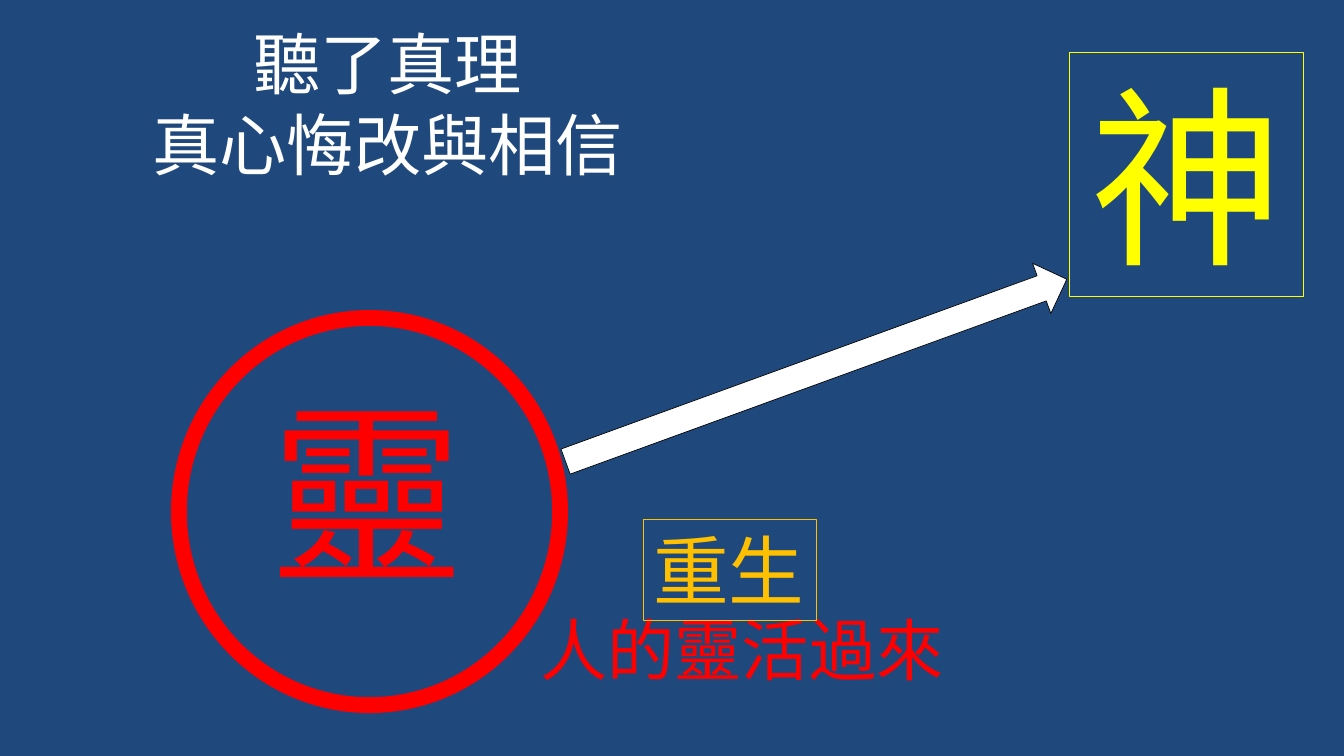
"""Build a slide on the spirit of man being born again toward God."""
from dataclasses import dataclass
from typing import Any, Optional

import lxml.etree
import pptx
import pptx.dml.color
import pptx.enum.shapes
import pptx.enum.text
import pptx.oxml.ns
import pptx.util

RGBColor = pptx.dml.color.RGBColor
Inches = pptx.util.Inches
Pt = pptx.util.Pt
KIND = pptx.enum.shapes.MSO_SHAPE
ALIGN = pptx.enum.text.PP_ALIGN
ANCHOR = pptx.enum.text.MSO_ANCHOR
SIZING = pptx.enum.text.MSO_AUTO_SIZE

NAVY = RGBColor(0x1F, 0x49, 0x7D)
RED = RGBColor(0xFF, 0x00, 0x00)
YELLOW = RGBColor(0xFF, 0xFF, 0x00)
GOLD = RGBColor(0xFF, 0xC0, 0x00)
WHITE = RGBColor(0xFF, 0xFF, 0xFF)
BLACK = RGBColor(0x00, 0x00, 0x00)
SANS = "Noto Sans CJK JP"
SERIF = "Times New Roman"

Box = tuple[float, float, float, float]


@dataclass
class Form:
    kind: Any
    box: Box
    fill: RGBColor
    edge: RGBColor
    width: float
    turn: float = 0
    ring: Optional[float] = None


@dataclass
class Label:
    lines: tuple[str, ...]
    box: Box
    size: int
    color: RGBColor
    font: str = SANS
    align: Any = ALIGN.LEFT
    anchor: Any = ANCHOR.TOP
    sizing: Any = SIZING.SHAPE_TO_FIT_TEXT
    wrap: bool = True
    frame: bool = False


FORMS = [
    Form(KIND.DONUT, (1.71, 3.09, 3.91, 3.97), RED, RED, 2, ring=0.033),
    Form(KIND.RIGHT_ARROW, (5.45, 3.41, 5.29, 0.53), WHITE, BLACK, 0.5, turn=340),
]

LABELS = [
    Label(("靈",), (2.58, 3.65, 1.72, 2.42), 138, RED),
    Label(("神",), (10.61, 0.52, 2.32, 2.42), 138, YELLOW,
          align=ALIGN.CENTER, frame=True),
    Label(("聽了真理", "真心悔改與相信"), (0.11, 0.13, 7.47, 1.79), 48, WHITE,
          align=ALIGN.CENTER, anchor=ANCHOR.MIDDLE, sizing=SIZING.NONE),
    Label(("人的靈活過來",), (5.26, 5.99, 4.24, 0.91), 48, RED, wrap=False),
    Label(("重生",), (6.38, 5.15, 1.72, 1.01), 54, GOLD,
          font=SERIF, wrap=False, frame=True),
]


def apply(target: Any, values: dict[str, Any]) -> None:
    for name, value in values.items():
        setattr(target, name, value)


def draw_form(slide: Any, form: Form) -> None:
    shape = slide.shapes.add_shape(form.kind, *map(Inches, form.box))
    shape.shadow.inherit = False
    shape.rotation = form.turn
    shape.fill.solid()
    shape.fill.fore_color.rgb = form.fill
    shape.line.color.rgb = form.edge
    shape.line.width = Pt(form.width)
    if form.ring is not None:
        shape.adjustments[0] = form.ring


def draw_label(slide: Any, label: Label) -> None:
    shape = slide.shapes.add_textbox(*map(Inches, label.box))
    if label.frame:
        shape.line.color.rgb = label.color
        shape.line.width = Pt(0.75)
    text = shape.text_frame
    apply(text, {"word_wrap": label.wrap, "auto_size": label.sizing,
                 "vertical_anchor": label.anchor})
    para = text.paragraphs[0]
    para.alignment = label.align
    for index, line in enumerate(label.lines):
        if index:
            para.add_line_break()
        run = para.add_run()
        run.text = line
        apply(run.font, {"name": label.font, "size": Pt(label.size)})
        run.font.color.rgb = label.color
        east = lxml.etree.SubElement(run.font._element, pptx.oxml.ns.qn("a:ea"))
        east.set("typeface", SANS)


def main() -> None:
    deck = pptx.Presentation()
    apply(deck, {"slide_width": Inches(13.33), "slide_height": Inches(7.5)})
    slide = deck.slides.add_slide(deck.slide_layouts[6])
    back = slide.background.fill
    back.solid()
    back.fore_color.rgb = NAVY
    for form in FORMS:
        draw_form(slide, form)
    for label in LABELS:
        draw_label(slide, label)
    deck.save("out.pptx")


if __name__ == "__main__":
    main()
